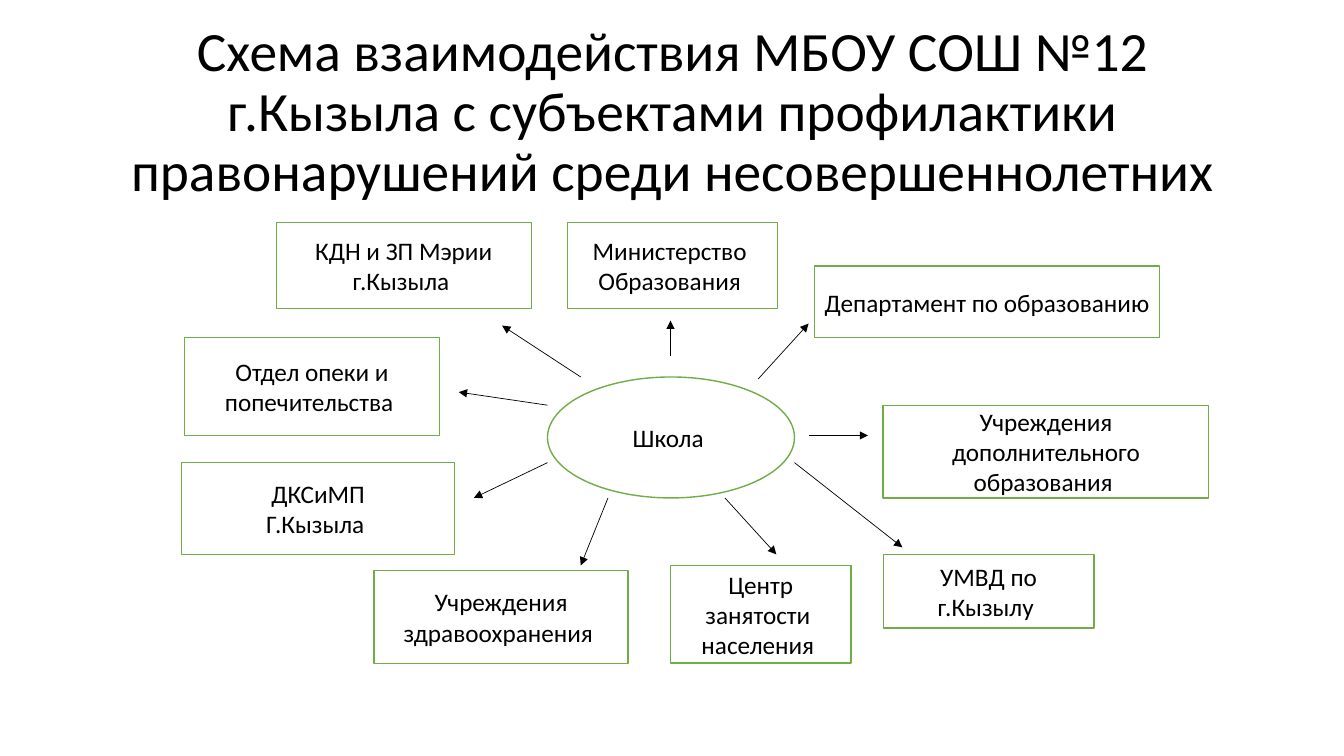
"""Builds a slide showing how the school works with its partner bodies."""
from lxml import etree
from pptx import Presentation
from pptx.dml.color import RGBColor
from pptx.enum.shapes import MSO_CONNECTOR, MSO_SHAPE
from pptx.enum.text import MSO_ANCHOR, MSO_AUTO_SIZE, PP_ALIGN
from pptx.oxml.ns import qn
from pptx.util import Pt

PX = 9144
RECT, ELLIPSE = MSO_SHAPE.RECTANGLE, MSO_SHAPE.OVAL
STRAIGHT = MSO_CONNECTOR.STRAIGHT
CENTER, MIDDLE = PP_ALIGN.CENTER, MSO_ANCHOR.MIDDLE
NO_FIT = MSO_AUTO_SIZE.NONE
WHITE, BLACK, GREEN = "FFFFFF", "000000", "70AD47"

TITLE = ("Схема взаимодействия МБОУ СОШ №12 г.Кызыла с субъектами "
         "профилактики правонарушений среди несовершеннолетних")
SCHOOL = ("Школа ", 543, 374, 245, 120)
PARTNERS = [
    ("Министерство \nОбразования ", 563, 221, 208, 85),
    ("Департамент по образованию ", 808, 264, 342, 71),
    ("Учреждения дополнительного образования ", 876, 402, 323, 92),
    ("УМВД по г.Кызылу ", 876, 550, 209, 73),
    ("Центр занятости \nнаселения ", 665, 561, 179, 97),
    ("Учреждения здравоохранения ", 371, 566, 252, 92),
    ("ДКСиМП\nГ.Кызыла ", 180, 459, 271, 91),
    ("Отдел опеки и попечительства ", 183, 335, 253, 97),
    ("КДН и ЗП Мэрии г.Кызыла ", 274, 221, 253, 85),
]
ARROWS = [
    (665, 353, 665, 318),
    (576, 374, 498, 323),
    (543, 402, 455, 389),
    (543, 459, 470, 494),
    (603, 494, 576, 561),
    (719, 494, 770, 550),
    (788, 459, 895, 543),
    (802, 432, 861, 432),
    (752, 376, 802, 321),
]


def px(*lengths):
    """Turn pixel lengths into EMU."""
    return [n * PX for n in lengths]


def color(value):
    """Turn a hex string into a colour."""
    return RGBColor.from_string(value)


def write(sp, text, size=18, spacing=1.0, font="Calibri", ink=BLACK):
    """Put centred text into a shape, one paragraph per line."""
    tf = sp.text_frame
    tf.text = text
    tf.word_wrap = True
    tf.auto_size = NO_FIT
    tf.vertical_anchor = MIDDLE
    for p in tf.paragraphs:
        p.alignment = CENTER
        p.line_spacing = spacing
        for r in p.runs:
            r.font.name = font
            r.font.size = Pt(size)
            r.font.color.rgb = color(ink)


def add_title(s, text, x, y, w, h):
    """Place and fill the title placeholder."""
    sp = s.shapes.title
    sp.left, sp.top, sp.width, sp.height = px(x, y, w, h)
    write(sp, text, size=39.6, spacing=0.9)


def add_node(s, text, x, y, w, h, kind=RECT):
    """Add an outlined shape with a label."""
    sp = s.shapes.add_shape(kind, *px(x, y, w, h))
    sp.shadow.inherit = False
    sp.fill.solid()
    sp.fill.fore_color.rgb = color(WHITE)
    sp.line.color.rgb = color(GREEN)
    sp.line.width = Pt(1)
    write(sp, text)


def add_arrow(s, x1, y1, x2, y2):
    """Add a thin line with an arrowhead at its end."""
    sp = s.shapes.add_connector(STRAIGHT, *px(x1, y1, x2, y2))
    sp.line.color.rgb = color(BLACK)
    sp.line.width = Pt(0.5)
    etree.SubElement(sp.line._get_or_add_ln(), qn("a:tailEnd"), type="triangle")
    etree.SubElement(sp._element.spPr, qn("a:effectLst"))


def main():
    """Build and save the slide."""
    prs = Presentation()
    prs.slide_width, prs.slide_height = px(1333, 750)
    s = prs.slides.add_slide(prs.slide_layouts[5])
    add_title(s, TITLE, 92, 40, 1150, 145)
    add_node(s, *SCHOOL, kind=ELLIPSE)
    for partner in PARTNERS:
        add_node(s, *partner)
    for arrow in ARROWS:
        add_arrow(s, *arrow)
    prs.save("out.pptx")


if __name__ == "__main__":
    main()
